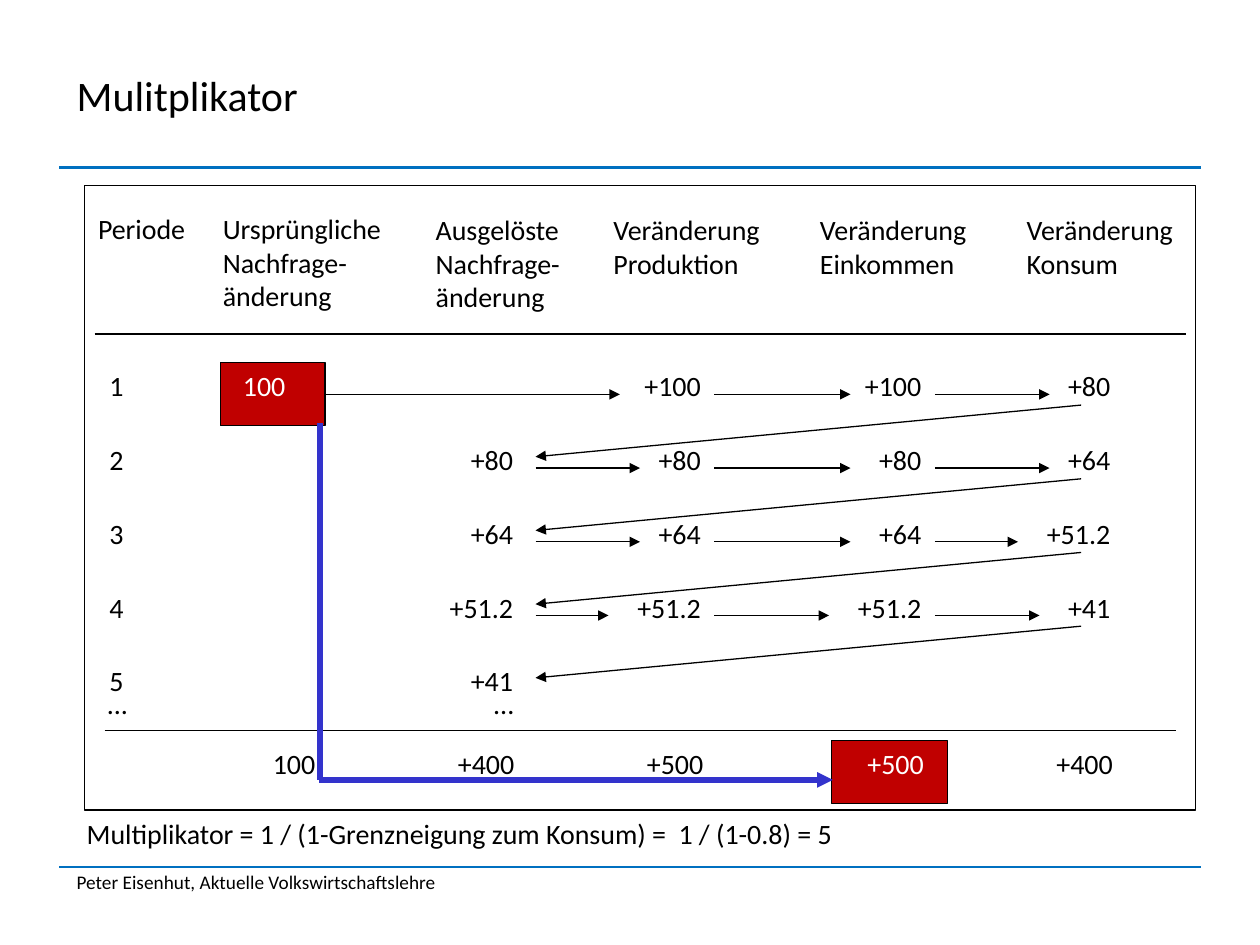
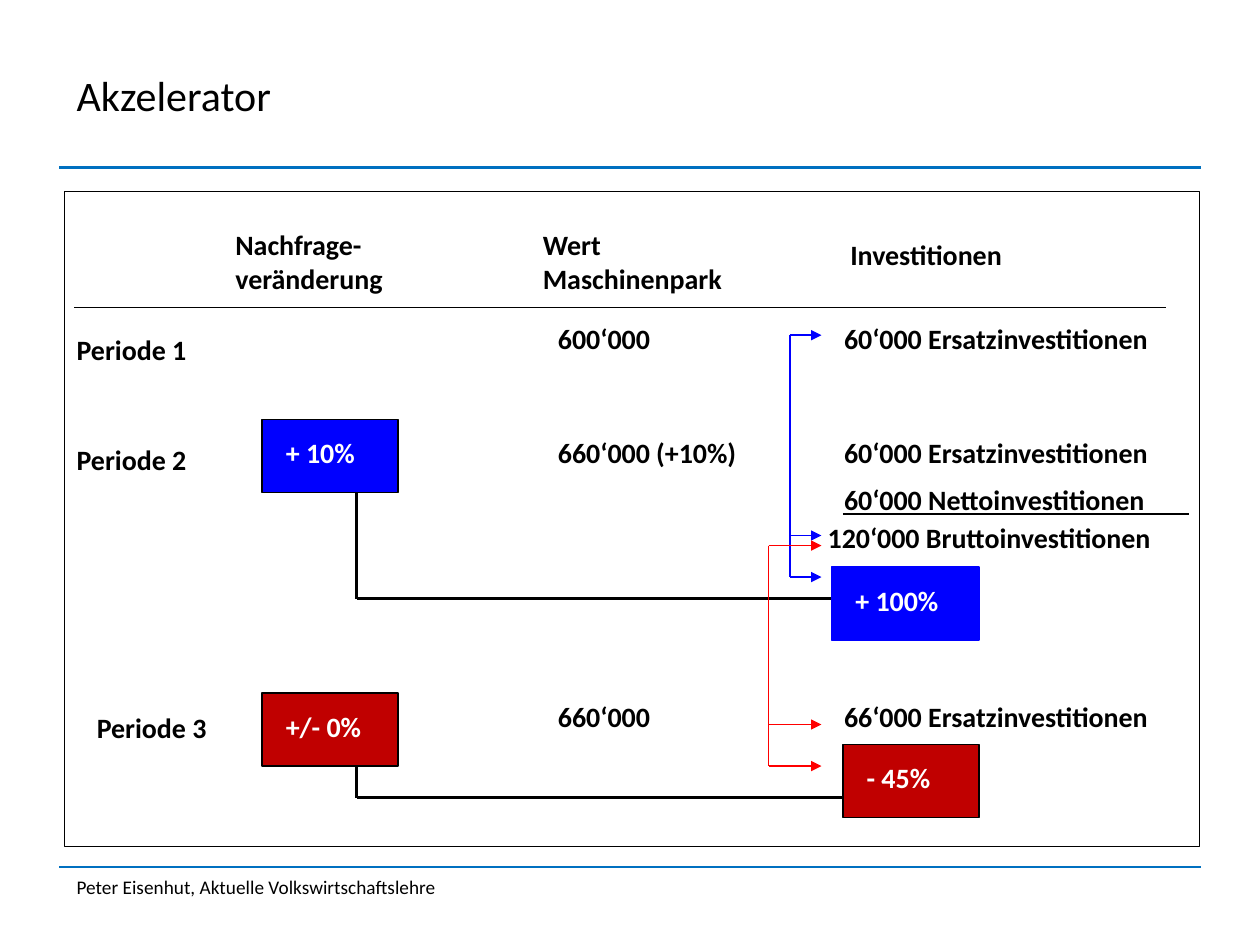
from dataclasses import dataclass

from lxml.etree import SubElement as Sub
from pptx import Presentation
from pptx.dml.color import RGBColor as Rgb
from pptx.enum.shapes import MSO_CONNECTOR as Link, MSO_SHAPE as Form
from pptx.enum.text import MSO_ANCHOR as Anchor, PP_ALIGN as Align
from pptx.oxml.ns import qn
from pptx.slide import Slide
from pptx.util import Inches, Pt

FONT = "Calibri"
HUES = {
    "ink": "000000",
    "white": "FFFFFF",
    "rule": "0070C0",
    "red": "C00000",
    "blue": "0000FF",
    "path": "3333CC",
    "loop": "FF0000",
}


@dataclass(frozen=True)
class Text:
    x: float
    y: float
    w: float
    text: str
    h: float = 0.37
    size: int = 16
    hue: str = "ink"
    bold: bool = False
    right: bool = False
    mid: bool = False
    gap: float = 0


@dataclass(frozen=True)
class Line:
    x1: float
    y1: float
    x2: float
    y2: float
    hue: str = "ink"
    width: float = 0.75
    tip: bool = False


@dataclass(frozen=True)
class Box:
    x: float
    y: float
    w: float
    h: float
    fill: str = ""
    edge: str = "ink"


def tone(name: str) -> Rgb:
    return Rgb.from_string(HUES[name])


# Drawing
def write(slide: Slide, item: Text) -> None:
    frame = slide.shapes.add_textbox(
        Inches(item.x), Inches(item.y), Inches(item.w), Inches(item.h)
    ).text_frame
    frame.word_wrap = True
    frame.vertical_anchor = Anchor.MIDDLE if item.mid else Anchor.TOP
    for i, part in enumerate(item.text.split("\n")):
        para = frame.add_paragraph() if i else frame.paragraphs[0]
        para.alignment = Align.RIGHT if item.right else Align.LEFT
        para.space_before = Pt(item.gap if i else 0)
        run = para.add_run()
        run.text = part
        run.font.name = FONT
        run.font.size = Pt(item.size)
        run.font.bold = item.bold
        run.font.color.rgb = tone(item.hue)


def rule(slide: Slide, item: Line) -> None:
    link = slide.shapes.add_connector(
        Link.STRAIGHT, Inches(item.x1), Inches(item.y1), Inches(item.x2), Inches(item.y2)
    )
    link.line.color.rgb = tone(item.hue)
    link.line.width = Pt(item.width)
    if item.tip:
        Sub(link.line._get_or_add_ln(), qn("a:tailEnd"), type="triangle")
    Sub(link._element.spPr, qn("a:effectLst"))


def block(slide: Slide, item: Box) -> None:
    shape = slide.shapes.add_shape(
        Form.RECTANGLE, Inches(item.x), Inches(item.y), Inches(item.w), Inches(item.h)
    )
    shape.shadow.inherit = False
    shape.line.color.rgb = tone(item.edge)
    shape.line.width = Pt(0.75)
    if item.fill:
        shape.fill.solid()
        shape.fill.fore_color.rgb = tone(item.fill)
    else:
        shape.fill.background()


def draw(slide: Slide, *items: Text | Line | Box) -> None:
    tools = {Text: write, Line: rule, Box: block}
    for item in items:
        tools[type(item)](slide, item)


# Shared title, rules and footer
def start(deck: Presentation, title: str, foot: float) -> Slide:
    slide = deck.slides.add_slide(deck.slide_layouts[6])
    draw(
        slide,
        *(Line(0.47, y, 9.53, y, "rule", 1.25) for y in (1.33, 6.88)),
        Text(0.51, foot, 8.98, "Peter Eisenhut, Aktuelle Volkswirtschaftslehre", 0.43, 11),
        Text(0.51, 0.36, 8.58, title, 0.79, 24, mid=True),
    )
    return slide


# Slide 1: rounds of demand
HEADS = [
    Text(0.68, 1.63, 1.17, "Periode"),
    Text(1.67, 1.63, 1.77, "Ursprüngliche Nachfrage-änderung", 0.9),
    Text(3.36, 1.64, 1.67, "Ausgelöste Nachfrage-änderung", 0.9),
    Text(4.77, 1.64, 1.67, "Veränderung Produktion", 0.64),
    Text(6.41, 1.64, 1.67, "Veränderung Einkommen", 0.64),
    Text(8.05, 1.64, 1.67, "Veränderung Konsum", 0.64),
]
EDGES = (4.17, 5.66, 7.41, 8.91)
TAILS = (4.25, 5.67, 7.42)
ROWS = [  # values by column, then arrow tips
    (("", "+100", "+100", "+80"), (4.92, 6.75, 8.33)),
    (("+80", "+80", "+80", "+64"), (5.08, 6.75, 8.33)),
    (("+64", "+64", "+64", "+51.2"), (5.08, 6.75, 8.08)),
    (("+51.2", "+51.2", "+51.2", "+41"), (4.83, 6.58, 8.25)),
    (("+41",), ()),
]
TOP, STEP = 2.88, 0.585
SUM = 5.88


def cell(edge: float, y: float, text: str, hue: str = "ink") -> Text:
    return Text(edge - 1.08, y, 1.08, text, hue=hue, right=True)


def rounds(deck: Presentation) -> None:
    slide = start(deck, "Mulitplikator", 6.86)
    draw(
        slide,
        Box(0.67, 1.47, 8.82, 4.96),
        *HEADS,
        Line(0.75, 2.65, 9.41, 2.65),
        Box(1.75, TOP, 0.83, 0.5, "red"),
        Text(1.83, TOP, 0.83, "100", hue="white"),
    )
    for i, (vals, tips) in enumerate(ROWS):
        y = TOP + i * STEP
        draw(slide, Text(0.77, y, 0.83, str(i + 1)))
        draw(slide, *(cell(edge, y, val) for edge, val in zip(EDGES, vals) if val))
        tails = TAILS if i else (2.58, *TAILS[1:])
        draw(slide, *(Line(a, y + 0.25, b, y + 0.25, tip=True) for a, b in zip(tails, tips)))
        if i:
            draw(slide, Line(8.58, y - 0.25, 4.25, y + 0.16, tip=True))
    # Totals
    draw(
        slide,
        Text(0.75, 5.4, 0.83, "..."),
        cell(4.18, 5.4, "..."),
        Line(0.83, 5.8, 9.33, 5.8),
        Box(6.6, SUM, 0.92, 0.5, "red"),
        cell(2.6, SUM, "100"),
        cell(4.18, SUM, "+400"),
        cell(5.68, SUM, "+500"),
        cell(7.43, SUM, "+500", "white"),
        cell(8.93, SUM, "+400"),
        Line(2.54, 3.36, 2.54, 6.19, "path", 3),
        Line(2.53, 6.19, 6.61, 6.19, "path", 3, True),
        Text(0.59, 6.43, 9, "Multiplikator = 1 / (1-Grenzneigung zum Konsum) =  1 / (1-0.8) = 5"),
    )


# Slide 2: demand drives investment
def bold(x: float, y: float, w: float, text: str, hue: str = "ink", gap: float = 0) -> Text:
    return Text(x, y, w, text, 0.37, hue=hue, bold=True, gap=gap)


def badge(x: float, y: float, text: str, fill: str, w: float = 1.08, edge: str = "ink") -> tuple:
    return Box(x, y, w, 0.58, fill, edge), bold(x + 0.09, y + 0.08, 1.08, text, "white")


def elbow(top: float, y: float) -> tuple:
    return Line(2.83, y, 6.92, y, width=1.5, tip=True), Line(2.83, y, 2.83, top, width=1.5)


def fork(x: float, hue: str, *stops: float) -> tuple:
    stem = Line(x, min(stops), x, max(stops), hue)
    return stem, *(Line(x, y, 6.52, y, hue, tip=True) for y in stops)


def growth(deck: Presentation) -> None:
    draw(
        start(deck, "Akzelerator", 6.9),
        Box(0.51, 1.52, 9.01, 5.2),
        # Headings and periods
        bold(1.77, 1.76, 1.7, "Nachfrage-\nveränderung"),
        bold(4.21, 1.76, 2.01, "Wert Maschinenpark"),
        bold(6.65, 1.84, 1.83, "Investitionen"),
        Line(0.59, 2.44, 9.25, 2.44),
        bold(0.51, 2.59, 1.83, "Periode 1"),
        bold(0.51, 3.46, 1.83, "Periode 2"),
        bold(0.67, 5.59, 1.83, "Periode 3"),
        # Values
        bold(4.33, 2.5, 2, "600‘000"),
        bold(4.33, 3.41, 2, "660‘000 (+10%)"),
        bold(4.33, 5.5, 2, "660‘000"),
        bold(6.6, 2.5, 3.08, "60‘000 Ersatzinvestitionen"),
        bold(6.6, 3.41, 3.08, "60‘000 Ersatzinvestitionen\n60‘000 Nettoinvestitionen", gap=7.5),
        Line(6.69, 4.08, 9.44, 4.08),
        bold(6.47, 4.08, 3.08, "120‘000 Bruttoinvestitionen"),
        bold(6.6, 5.5, 3.08, "66‘000 Ersatzinvestitionen"),
        # Causes and effects
        *badge(2.08, 3.33, "+ 10%", "blue"),
        *badge(2.08, 5.5, "+/- 0%", "red"),
        *elbow(3.91, 4.75),
        *elbow(6.08, 6.33),
        *badge(6.6, 4.5, "+ 100%", "blue", 1.17, "blue"),
        *badge(6.69, 5.91, "- 45%", "red"),
        *fork(6.27, "blue", 2.66, 4.25, 4.58),
        *fork(6.1, "loop", 4.33, 5.75, 6.08),
    )


def main() -> None:
    deck = Presentation()
    deck.slide_width, deck.slide_height = Inches(10), Inches(7.5)
    rounds(deck)
    growth(deck)
    deck.save("out.pptx")


if __name__ == "__main__":
    main()
